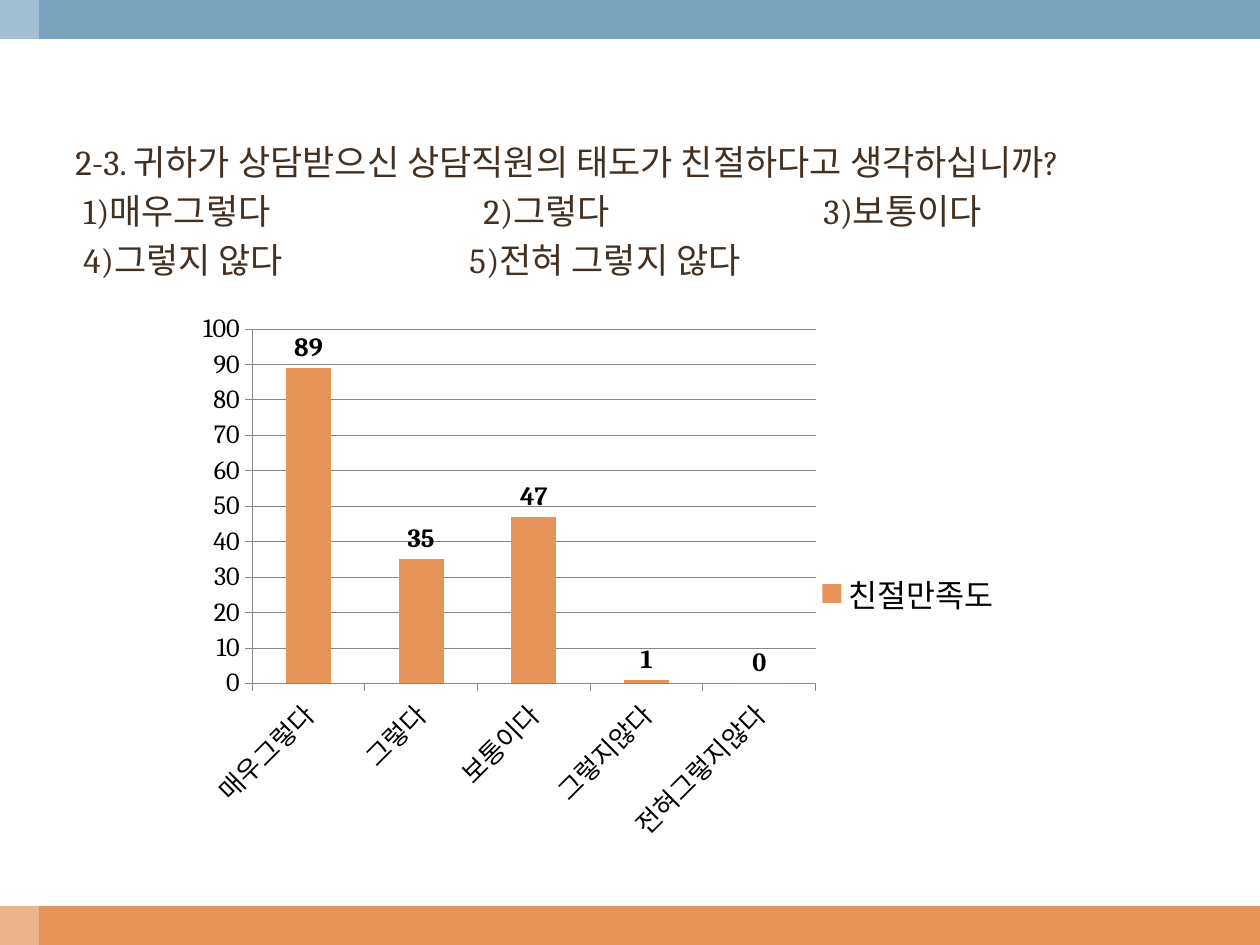
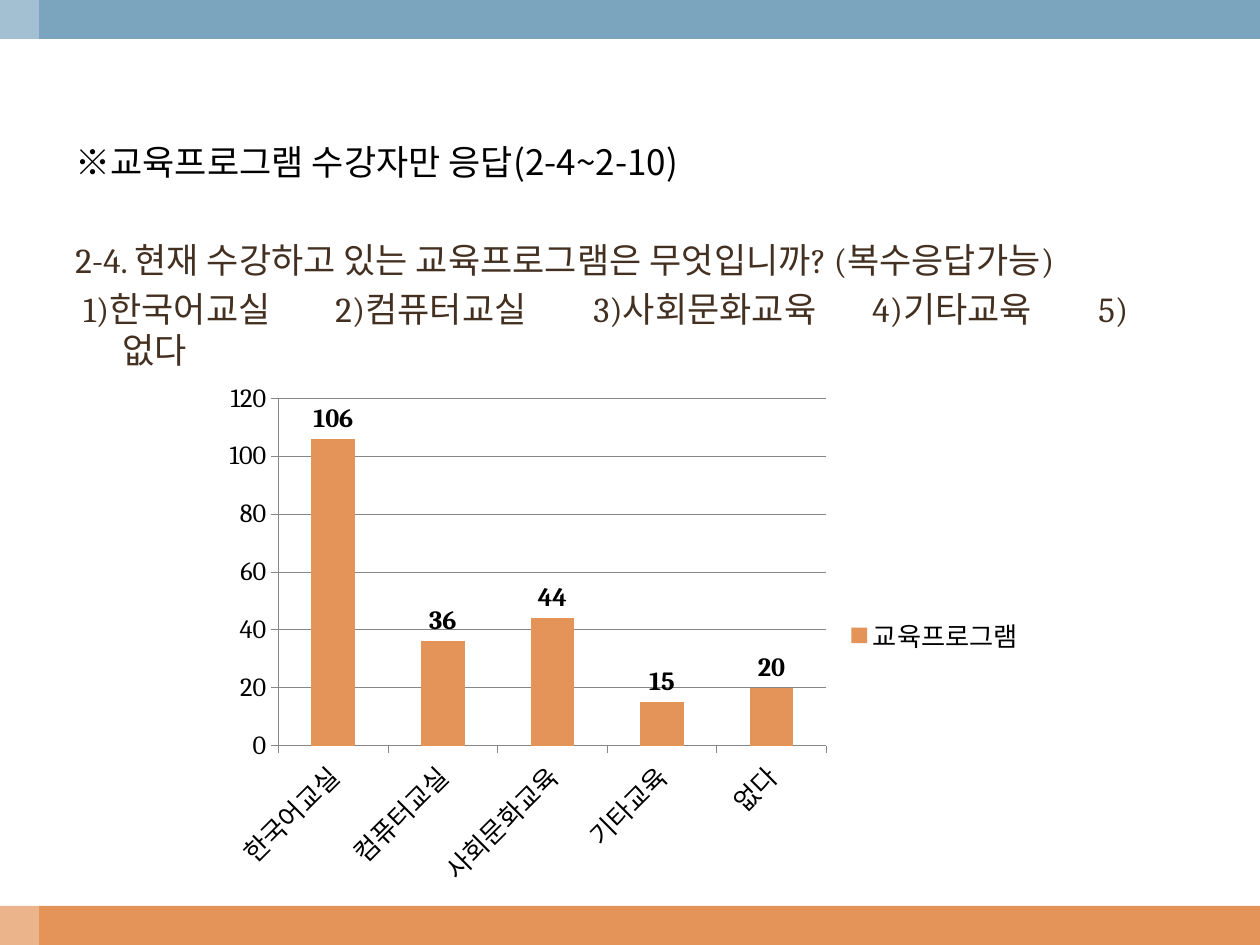
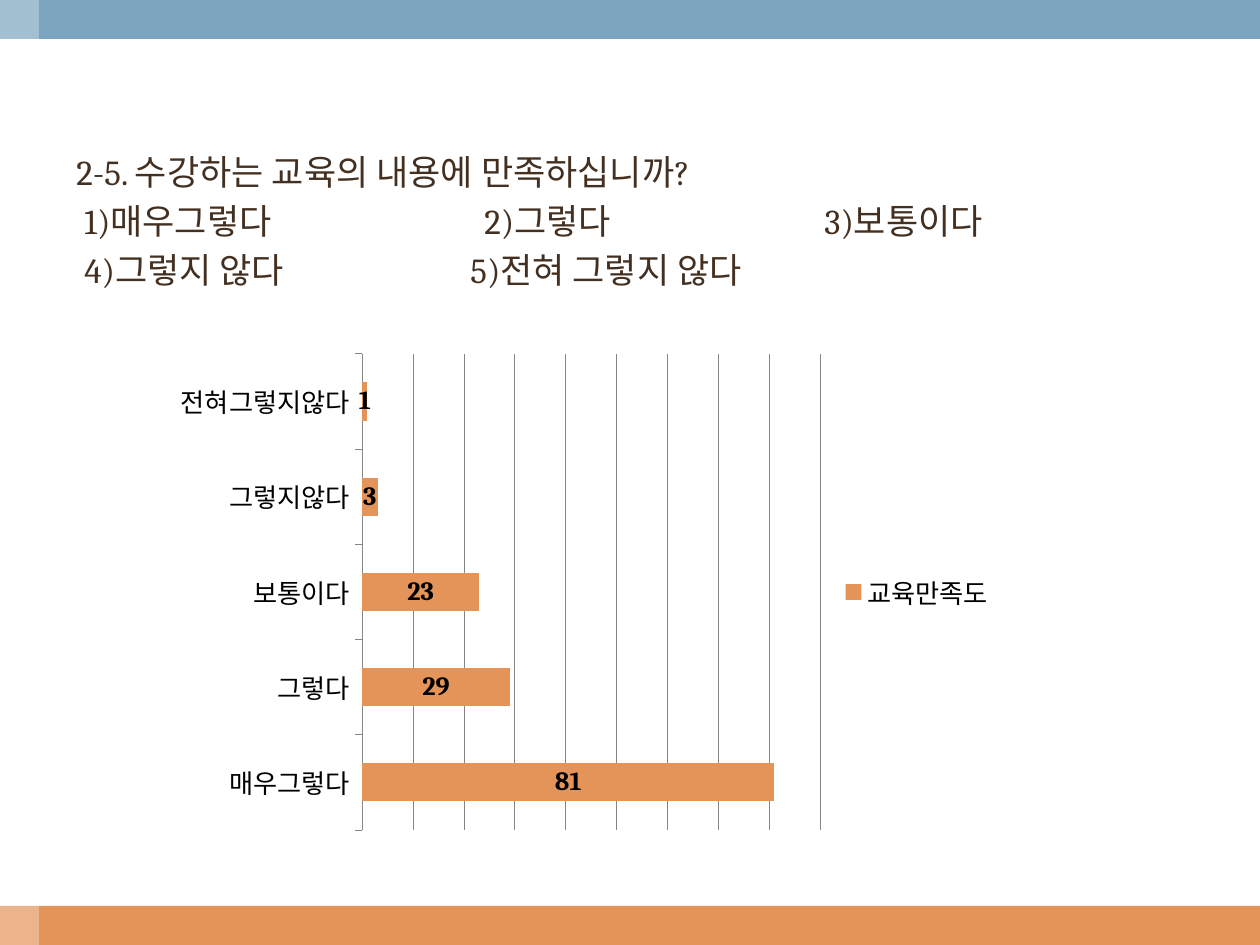
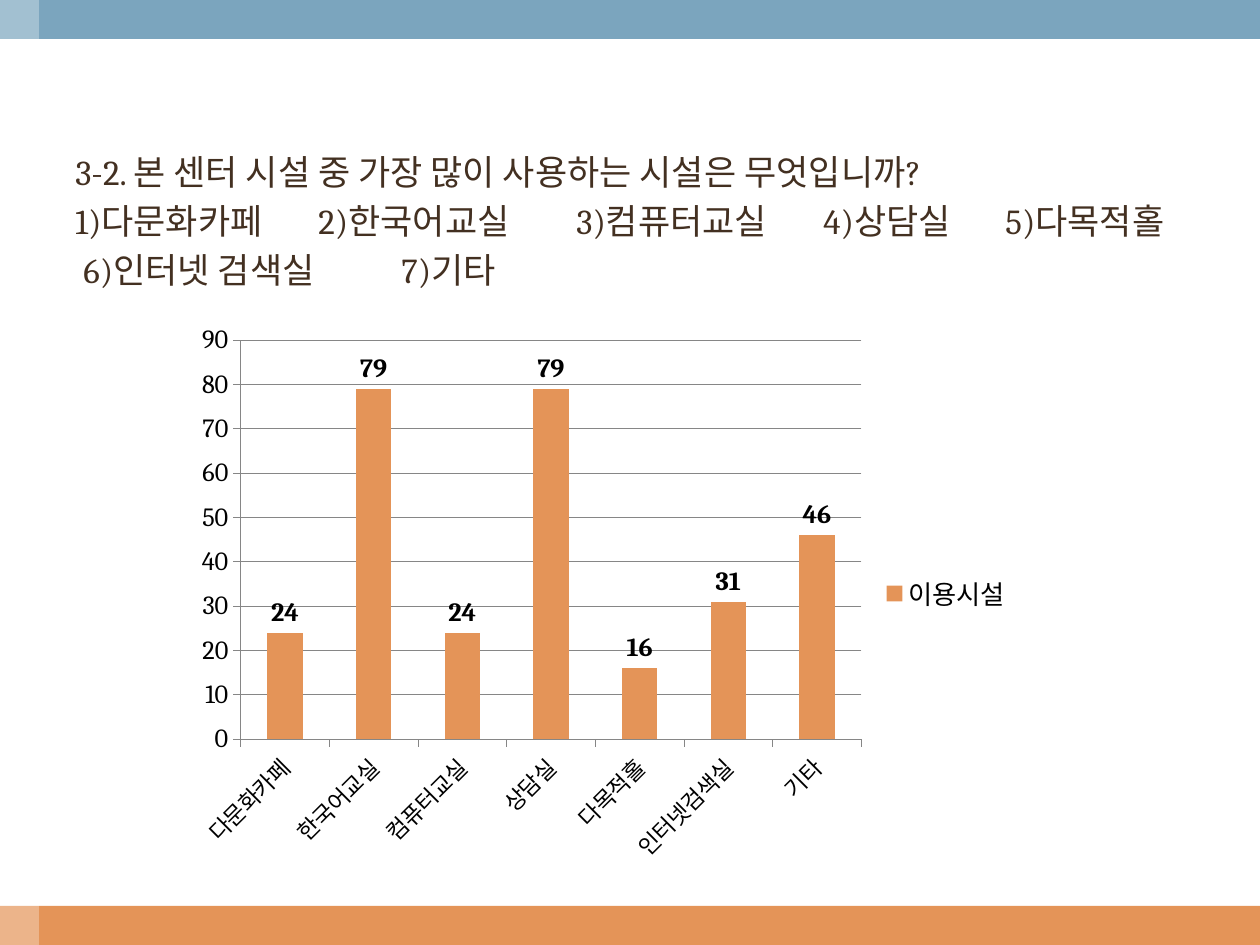
from lxml.etree import SubElement
from pptx import Presentation
from pptx.chart.data import CategoryChartData
from pptx.dml.color import RGBColor
from pptx.enum.chart import XL_CHART_TYPE as ChartType
from pptx.enum.chart import XL_LABEL_POSITION as LabelPosition
from pptx.enum.chart import XL_LEGEND_POSITION as LegendPosition
from pptx.enum.chart import XL_TICK_MARK as TickMark
from pptx.enum.shapes import MSO_SHAPE as Preset
from pptx.oxml.ns import qn
from pptx.util import Pt

EMU_PER_PX = 914400 / 126
WIDTH, HEIGHT, BAND = 1260, 945, 39

ORANGE, BLUE, WHITE = "E49458", "7BA5BE", "FFFFFF"
BROWN, BLACK, GRAY = "433021", "000000", "868686"
FONT, NOTICE_FONT = "Cambria", "Noto Sans CJK KR"

TEXT_WIDTH = 1134
LINE_HEIGHT = 56
LINE_PITCH = 49
WRAP_PITCH = 41

AGREEMENT = ["매우그렇다", "그렇다", "보통이다", "그렇지않다", "전혀그렇지않다"]
# Each option row: distance below the row above, then offset from the left: text
AGREEMENT_ROWS = [
    (LINE_PITCH, {8: "1)매우그렇다", 408: "2)그렇다", 748: "3)보통이다"}),
    (LINE_PITCH, {8: "4)그렇지 않다", 394: "5)전혀 그렇지 않다"}),
]

SURVEY = [
    {
        "text_at": (63, 134),
        "question": "2-3. 귀하가 상담받으신 상담직원의 태도가 친절하다고 생각하십니까?",
        "options": AGREEMENT_ROWS,
        "chart_at": (174, 314, 840, 559),
        "series": "친절만족도",
        "categories": AGREEMENT,
        "values": [89, 35, 47, 1, 0],
        "scale": (100, 10),
        "legend_size": 18,
        "plot": {"x": 0.093, "y": 0.027, "w": 0.671, "h": 0.634},
    },
    {
        "text_at": (63, 134),
        "notice": "※교육프로그램 수강자만 응답(2-4~2-10)",
        "question": "2-4. 현재 수강하고 있는 교육프로그램은 무엇입니까? (복수응답가능)",
        "options": [
            (LINE_PITCH, {8: "1)한국어교실", 260: "2)컴퓨터교실",
                          518: "3)사회문화교육", 797: "4)기타교육", 1023: "5)"}),
            (WRAP_PITCH, {47: "없다"}),
        ],
        "chart_at": (213, 373, 824, 525),
        "series": "교육프로그램",
        "categories": ["한국어교실", "컴퓨터교실", "사회문화교육", "기타교육", "없다"],
        "values": [106, 36, 44, 15, 20],
        "scale": (120, 20),
    },
    {
        "text_at": (64, 144),
        "question": "2-5. 수강하는 교육의 내용에 만족하십니까?",
        "options": AGREEMENT_ROWS,
        "chart_at": (164, 344, 843, 496),
        "type": ChartType.BAR_STACKED,
        "series": "교육만족도",
        "categories": AGREEMENT,
        "values": [81, 29, 23, 3, 1],
        "scale": (90, 10),
    },
    {
        "text_at": (63, 144),
        "question": "3-2. 본 센터 시설 중 가장 많이 사용하는 시설은 무엇입니까?",
        "options": [
            (LINE_PITCH, {0: "1)다문화카페", 243: "2)한국어교실",
                          501: "3)컴퓨터교실", 748: "4)상담실", 930: "5)다목적홀"}),
            (LINE_PITCH, {8: "6)인터넷 검색실", 326: "7)기타"}),
        ],
        "chart_at": (184, 314, 840, 559),
        "series": "이용시설",
        "categories": ["다문화카페", "한국어교실", "컴퓨터교실", "상담실",
                       "다목적홀", "인터넷검색실", "기타"],
        "values": [24, 79, 24, 79, 16, 31, 46],
        "scale": (90, 10),
        "category_size": 13,
    },
]


def px(length):
    return round(length * EMU_PER_PX)


def box(place):
    return [px(length) for length in place]


def color(value):
    return RGBColor.from_string(value)


def set_all(target, **values):
    for name, value in values.items():
        setattr(target, name, value)


def style_font(font, size, bold=False, name=FONT, fill=BLACK):
    set_all(font, size=Pt(size), bold=bold, name=name)
    font.color.rgb = color(fill)


def style_line(line):
    line.color.rgb = color(GRAY)
    line.width = Pt(0.5)


def add_band(slide, place, fill, alpha=None):
    shape = slide.shapes.add_shape(Preset.RECTANGLE, *box(place))
    shape.shadow.inherit = False
    shape.fill.solid()
    shape.fill.fore_color.rgb = color(fill)
    shape.line.fill.background()
    if alpha:
        solid = shape.element.spPr.find(qn("a:solidFill"))
        SubElement(solid[0], qn("a:alpha"), val=str(alpha * 1000))


def add_frame_bands(slide):
    add_band(slide, (0, HEIGHT - BAND, WIDTH, BAND), ORANGE)
    add_band(slide, (0, 0, WIDTH, BAND), BLUE)
    add_band(slide, (0, 0, BAND, HEIGHT), WHITE, alpha=30)


def add_line(slide, text, left, top, width=TEXT_WIDTH, name=FONT, fill=BROWN):
    place = box((left, top, width, LINE_HEIGHT))
    frame = slide.shapes.add_textbox(*place).text_frame
    frame.word_wrap = True
    paragraph = frame.paragraphs[0]
    paragraph.line_spacing = Pt(24) if name == NOTICE_FONT else None
    run = paragraph.add_run()
    run.text = text
    style_font(run.font, 20, name=name, fill=fill)


def add_option_row(slide, options, left, top):
    offsets = list(options)
    # Every option reaches to the next one, the last to the right margin
    for offset, end in zip(offsets, offsets[1:] + [TEXT_WIDTH]):
        add_line(slide, options[offset], left + offset, top, end - offset)


def add_question(slide, item):
    left, top = item["text_at"]
    if "notice" in item:
        add_line(slide, item["notice"], left, top, name=NOTICE_FONT, fill=BLACK)
        top += 2 * LINE_PITCH
    add_line(slide, item["question"], left, top)
    for pitch, options in item["options"]:
        top += pitch
        add_option_row(slide, options, left, top)


def set_plot_layout(chart, plot):
    area = chart.element.find(".//" + qn("c:plotArea"))
    for old in area.findall(qn("c:layout")):
        area.remove(old)
    layout = SubElement(area, qn("c:layout"))
    area.insert(0, layout)
    manual = SubElement(layout, qn("c:manualLayout"))
    settings = {"layoutTarget": "inner", "xMode": "edge", "yMode": "edge", **plot}
    for tag, value in settings.items():
        SubElement(manual, qn("c:" + tag), val=str(value))


def style_axis(axis, size):
    set_all(axis, major_tick_mark=TickMark.OUTSIDE, minor_tick_mark=TickMark.NONE)
    style_font(axis.tick_labels.font, size)
    style_line(axis.format.line)


def add_survey_chart(slide, item):
    kind = item.get("type", ChartType.COLUMN_CLUSTERED)
    stacked = kind == ChartType.BAR_STACKED
    data = CategoryChartData()
    data.categories = item["categories"]
    data.add_series(item["series"], item["values"])
    chart = slide.shapes.add_chart(kind, *box(item["chart_at"]), data).chart
    set_all(chart, has_title=False, has_legend=True)
    style_font(chart.font, 18)

    # Legend
    set_all(chart.legend, position=LegendPosition.RIGHT, include_in_layout=False)
    style_font(chart.legend.font, item.get("legend_size", 15))

    # Axes
    style_axis(chart.category_axis, item.get("category_size", 15))
    values = chart.value_axis
    style_axis(values, 15)
    maximum, unit = item["scale"]
    set_all(values, minimum_scale=0, maximum_scale=maximum, major_unit=unit,
            has_major_gridlines=True, visible=not stacked)
    style_line(values.major_gridlines.format.line)

    # Bars and their labels
    plot = chart.plots[0]
    set_all(plot, gap_width=150, vary_by_categories=False, has_data_labels=True)
    fill = plot.series[0].format.fill
    fill.solid()
    fill.fore_color.rgb = color(ORANGE)
    position = LabelPosition.CENTER if stacked else LabelPosition.OUTSIDE_END
    set_all(plot.data_labels, show_value=True, position=position)
    style_font(plot.data_labels.font, 15, bold=True)
    if "plot" in item:
        set_plot_layout(chart, item["plot"])


def main():
    presentation = Presentation()
    set_all(presentation, slide_width=px(WIDTH), slide_height=px(HEIGHT))
    for item in SURVEY:
        slide = presentation.slides.add_slide(presentation.slide_layouts[6])
        add_frame_bands(slide)
        add_question(slide, item)
        add_survey_chart(slide, item)
    presentation.save("out.pptx")


if __name__ == "__main__":
    main()
